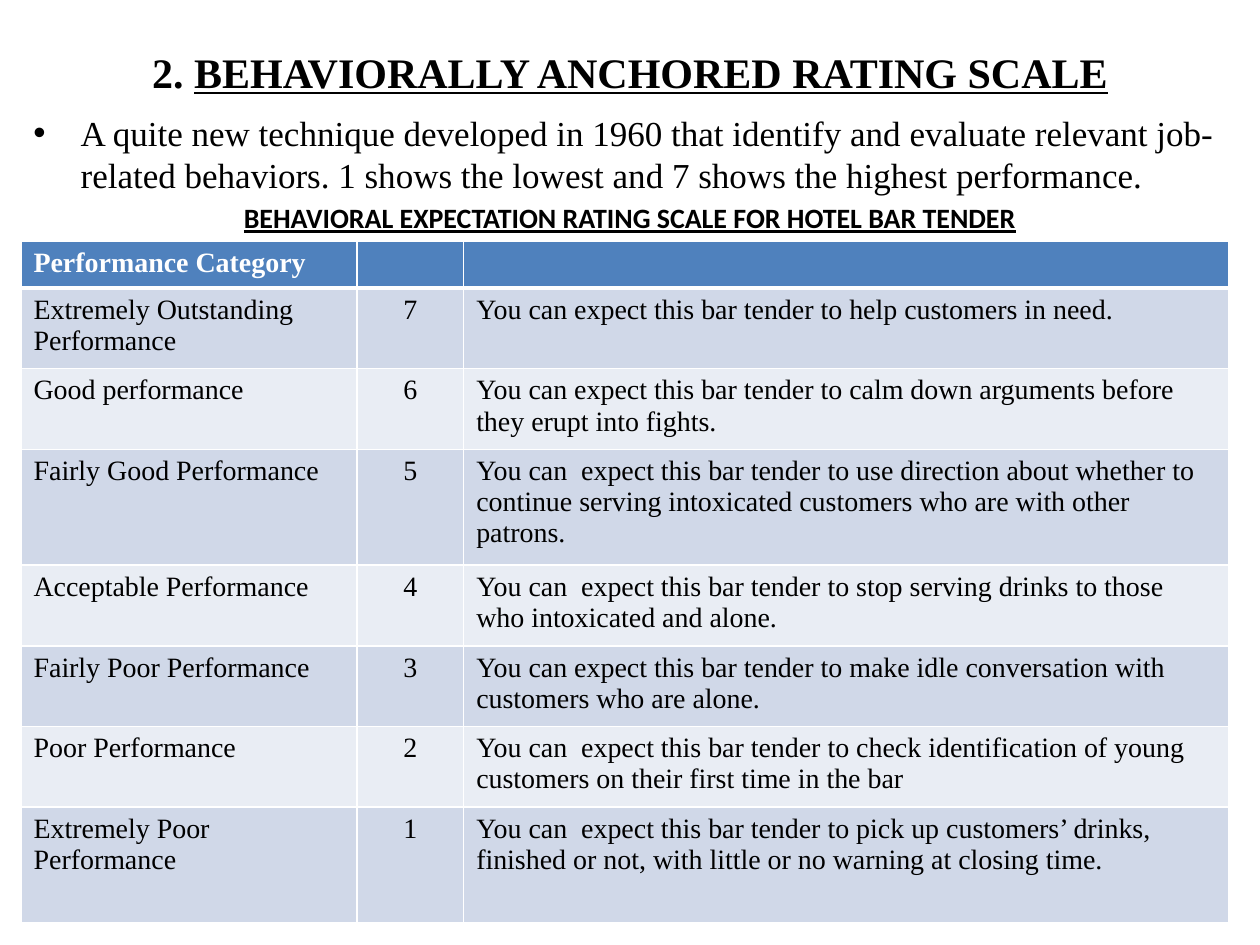
import pptx
import pptx.util
import pptx.dml.color
import pptx.enum.text
import pptx.oxml
from dataclasses import dataclass
from lxml import etree

Pt = pptx.util.Pt
RGB = pptx.dml.color.RGBColor.from_string
CENTER = pptx.enum.text.PP_ALIGN.CENTER
LEFT = pptx.enum.text.PP_ALIGN.LEFT
MIDDLE = pptx.enum.text.MSO_ANCHOR.MIDDLE
NAMESPACE = "http://schemas.openxmlformats.org/drawingml/2006/main"


@dataclass
class Theme:
    serif: str = "Times New Roman"
    sans: str = "Calibri"
    ink: str = "000000"
    white: str = "FFFFFF"
    header: str = "4F81BD"
    bands: tuple = ("D0D8E8", "E9EDF4")
    title_size: int = 24
    body_size: int = 20
    table_size: int = 16


theme = Theme()


def add_run(paragraph, text, size, font=theme.serif, color=theme.ink, bold=False, underline=False):
    run = paragraph.add_run()
    run.text = text
    run.font.size = Pt(size)
    run.font.name = font
    run.font.bold = bold
    run.font.underline = underline
    run.font.color.rgb = RGB(color)


def add_border(cell, side, width):
    cell._tc.get_or_add_tcPr().append(pptx.oxml.parse_xml(
        f'<a:ln{side} xmlns:a="{NAMESPACE}" w="{Pt(width)}"><a:solidFill>'
        f'<a:srgbClr val="{theme.white}"/></a:solidFill></a:ln{side}>'))


presentation = pptx.Presentation()
presentation.slide_width = Pt(720)
presentation.slide_height = Pt(540)
slide = presentation.slides.add_slide(presentation.slide_layouts[5])

title = slide.shapes.title
title.left, title.top, title.width, title.height = Pt(36), Pt(21.6), Pt(648), Pt(38.4)
title.text_frame.vertical_anchor = MIDDLE
paragraph = title.text_frame.paragraphs[0]
paragraph.alignment = CENTER
add_run(paragraph, "2. ", theme.title_size, bold=True)
add_run(paragraph, "BEHAVIORALLY ANCHORED RATING SCALE", theme.title_size, bold=True, underline=True)

introduction = slide.shapes.add_textbox(Pt(12), Pt(60), Pt(696), Pt(78))
introduction.text_frame.word_wrap = True
paragraph = introduction.text_frame.paragraphs[0]
paragraph.space_before = Pt(4)
properties = paragraph._p.get_or_add_pPr()
properties.set("marL", str(Pt(27)))
properties.set("indent", str(Pt(-27)))
etree.SubElement(properties, f"{{{NAMESPACE}}}buFont", typeface="Arial")
etree.SubElement(properties, f"{{{NAMESPACE}}}buChar", char="•")
add_run(paragraph, "A quite new technique developed in 1960 that identify and evaluate relevant "
        "job-related behaviors. 1 shows the lowest and 7 shows the highest performance.", theme.body_size)

paragraph = introduction.text_frame.add_paragraph()
paragraph.alignment = CENTER
paragraph.space_before = Pt(3.2)
add_run(paragraph, "BEHAVIORAL EXPECTATION RATING SCALE FOR HOTEL BAR TENDER", theme.table_size,
        font=theme.sans, bold=True, underline=True)

rows = [
    ("Performance Category", "", ""),
    ("Extremely Outstanding Performance", "7", "You can expect this bar tender to help customers in need."),
    ("Good performance", "6",
     "You can expect this bar tender to calm down arguments before they erupt into fights."),
    ("Fairly Good Performance", "5",
     "You can  expect this bar tender to use direction about whether to continue serving "
     "intoxicated customers who are with other patrons."),
    ("Acceptable Performance", "4",
     "You can  expect this bar tender to stop serving drinks to those who intoxicated and alone."),
    ("Fairly Poor Performance", "3",
     "You can expect this bar tender to make idle conversation with customers who are alone."),
    ("Poor Performance", "2",
     "You can  expect this bar tender to check identification of young customers on their "
     "first time in the bar"),
    ("Extremely Poor Performance", "1",
     "You can  expect this bar tender to pick up customers’ drinks, finished or not, with "
     "little or no warning at closing time."),
]
column_widths = [192, 61, 437]
row_heights = [26.6, 46.1, 46.1, 66.2, 46.1, 46.1, 46.1, 66.2]

table = slide.shapes.add_table(len(rows), len(column_widths), Pt(12), Pt(138),
                               Pt(sum(column_widths)), Pt(sum(row_heights))).table
table.horz_banding = False
for column, width in zip(table.columns, column_widths):
    column.width = Pt(width)

for row_index, (texts, height) in enumerate(zip(rows, row_heights)):
    table.rows[row_index].height = Pt(height)
    is_header = row_index == 0
    fill = theme.header if is_header else theme.bands[(row_index - 1) % 2]
    for column_index, text in enumerate(texts):
        cell = table.cell(row_index, column_index)
        for side in "LRTB":
            under_header = (row_index, side) in ((0, "B"), (1, "T"))
            add_border(cell, side, 3 if under_header else 1)
        cell.fill.solid()
        cell.fill.fore_color.rgb = RGB(fill)
        paragraph = cell.text_frame.paragraphs[0]
        paragraph.alignment = CENTER if column_index == 1 else LEFT
        if text:
            add_run(paragraph, text, theme.table_size,
                    color=theme.white if is_header else theme.ink, bold=is_header)
        else:
            paragraph.font.size = Pt(theme.table_size)
            paragraph._p.get_or_add_endParaRPr().set("sz", str(theme.table_size * 100))

presentation.save("out.pptx")
